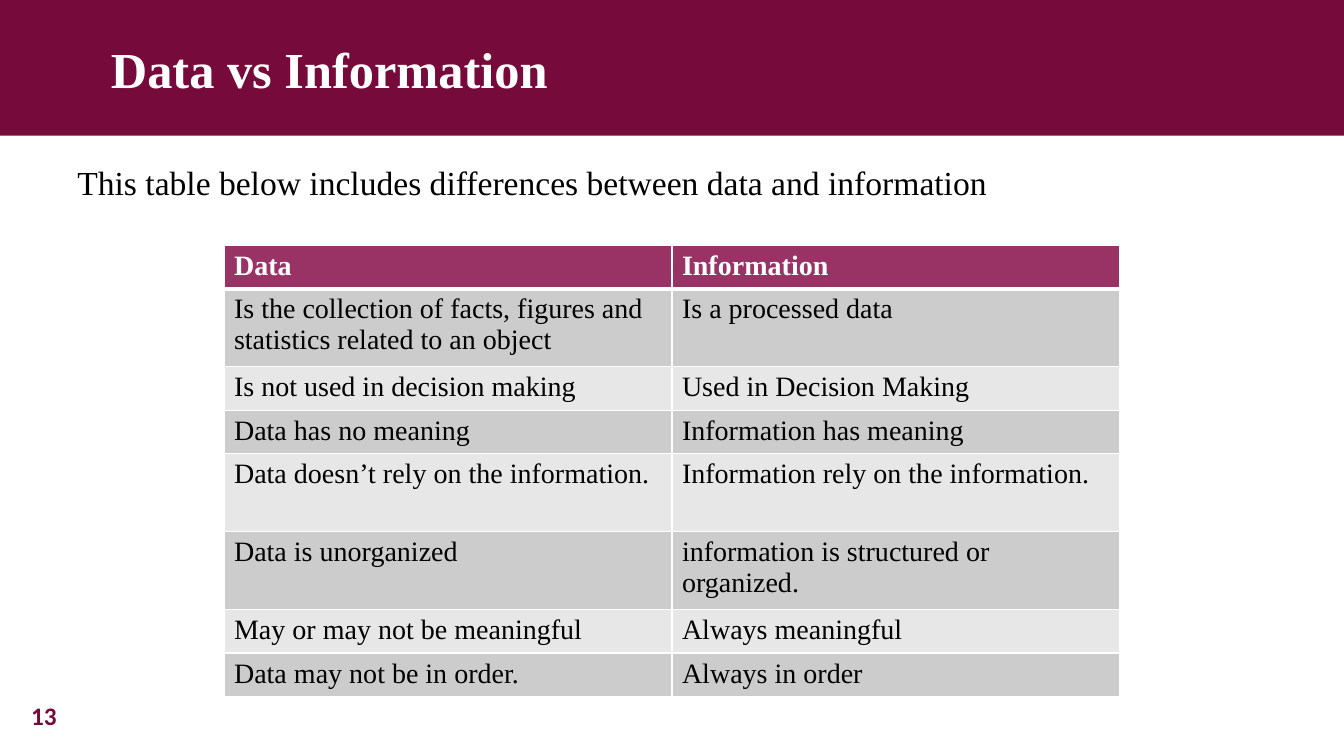
from lxml.etree import SubElement
from pptx import Presentation
from pptx.dml.color import RGBColor
from pptx.enum.shapes import MSO_SHAPE
from pptx.enum.text import MSO_ANCHOR, MSO_AUTO_SIZE, PP_ALIGN
from pptx.oxml.ns import qn
from pptx.util import Pt

COLORS = {
    "maroon": "760A3A",
    "header": "993366",
    "odd": "CCCCCC",
    "even": "E7E7E7",
    "white": "FFFFFF",
    "black": "000000",
}
SERIF = "Times New Roman"
ONE_LINE, TWO_LINES = 31, 55.5
ROWS = [
    (ONE_LINE, "Data", "Information"),
    (TWO_LINES, "Is the collection of facts, figures and statistics related to an object",
     "Is a processed data"),
    (ONE_LINE, "Is not used in decision making", "Used in Decision Making"),
    (ONE_LINE, "Data has no meaning", "Information has meaning"),
    (TWO_LINES, "Data doesn’t rely on the information.", "Information rely on the information."),
    (TWO_LINES, "Data is unorganized", "information is structured or organized."),
    (ONE_LINE, "May or may not be meaningful", "Always meaningful"),
    (ONE_LINE, "Data may not be in order.", "Always in order"),
]


def rgb(name):
    return RGBColor.from_string(COLORS[name])


def set_fill(target, color):
    target.fill.solid()
    target.fill.fore_color.rgb = rgb(color)


def set_attrs(target, values):
    for name, value in values.items():
        setattr(target, name, value)


def write(tf, text, size, color, bold=False, font=SERIF):
    p = tf.paragraphs[0]
    p.alignment = PP_ALIGN.LEFT
    r = p.add_run()
    r.text = text
    set_attrs(r.font, {"name": font, "size": Pt(size), "bold": bold})
    r.font.color.rgb = rgb(color)


def add_banner(s, text):
    sp = s.shapes.add_shape(MSO_SHAPE.RECTANGLE, 0, 0, Pt(960), Pt(97))
    sp.shadow.inherit = False
    set_fill(sp, "maroon")
    sp.line.fill.background()
    set_attrs(sp.text_frame, {"margin_left": Pt(79.2), "vertical_anchor": MSO_ANCHOR.MIDDLE})
    write(sp.text_frame, text, 36, "white", bold=True)


def add_text(s, box, text, size, color, wrap=True, **style):
    tf = s.shapes.add_textbox(*map(Pt, box)).text_frame
    set_attrs(tf, {"word_wrap": wrap, "auto_size": MSO_AUTO_SIZE.SHAPE_TO_FIT_TEXT})
    write(tf, text, size, color, **style)


def add_borders(cell, widths):
    tcPr = cell._tc.get_or_add_tcPr()
    for side, width in widths.items():
        ln = SubElement(tcPr, qn(f"a:ln{side}"), w=str(Pt(width)))
        fill = SubElement(ln, qn("a:solidFill"))
        SubElement(fill, qn("a:srgbClr"), val=COLORS["white"])


def add_comparison(s, left, top, col_width):
    height = sum(row[0] for row in ROWS)
    table = s.shapes.add_table(
        len(ROWS), 2, Pt(left), Pt(top), Pt(2 * col_width), Pt(height)).table
    for col in table.columns:
        col.width = Pt(col_width)
    for i, (row_height, *texts) in enumerate(ROWS):
        table.rows[i].height = Pt(row_height)
        is_header = i == 0
        fill = "header" if is_header else "odd" if i % 2 else "even"
        widths = {"L": 1, "R": 1, "T": 3 if i == 1 else 1, "B": 3 if is_header else 1}
        for j, text in enumerate(texts):
            cell = table.cell(i, j)
            add_borders(cell, widths)
            set_fill(cell, fill)
            write(cell.text_frame, text, 20, "white" if is_header else "black", bold=is_header)


def main():
    prs = Presentation()
    set_attrs(prs, {"slide_width": Pt(960), "slide_height": Pt(540)})
    s = prs.slides.add_slide(prs.slide_layouts[6])
    add_banner(s, "Data vs Information")
    add_text(s, (48.2, 112.3, 834, 36),
             "This table below includes differences between data and information", 24, "black")
    add_text(s, (15.1, 497, 33, 29), "13", 18, "maroon", wrap=False, bold=True, font="Calibri")
    add_comparison(s, 160, 175, 320)
    prs.save("out.pptx")


if __name__ == "__main__":
    main()
